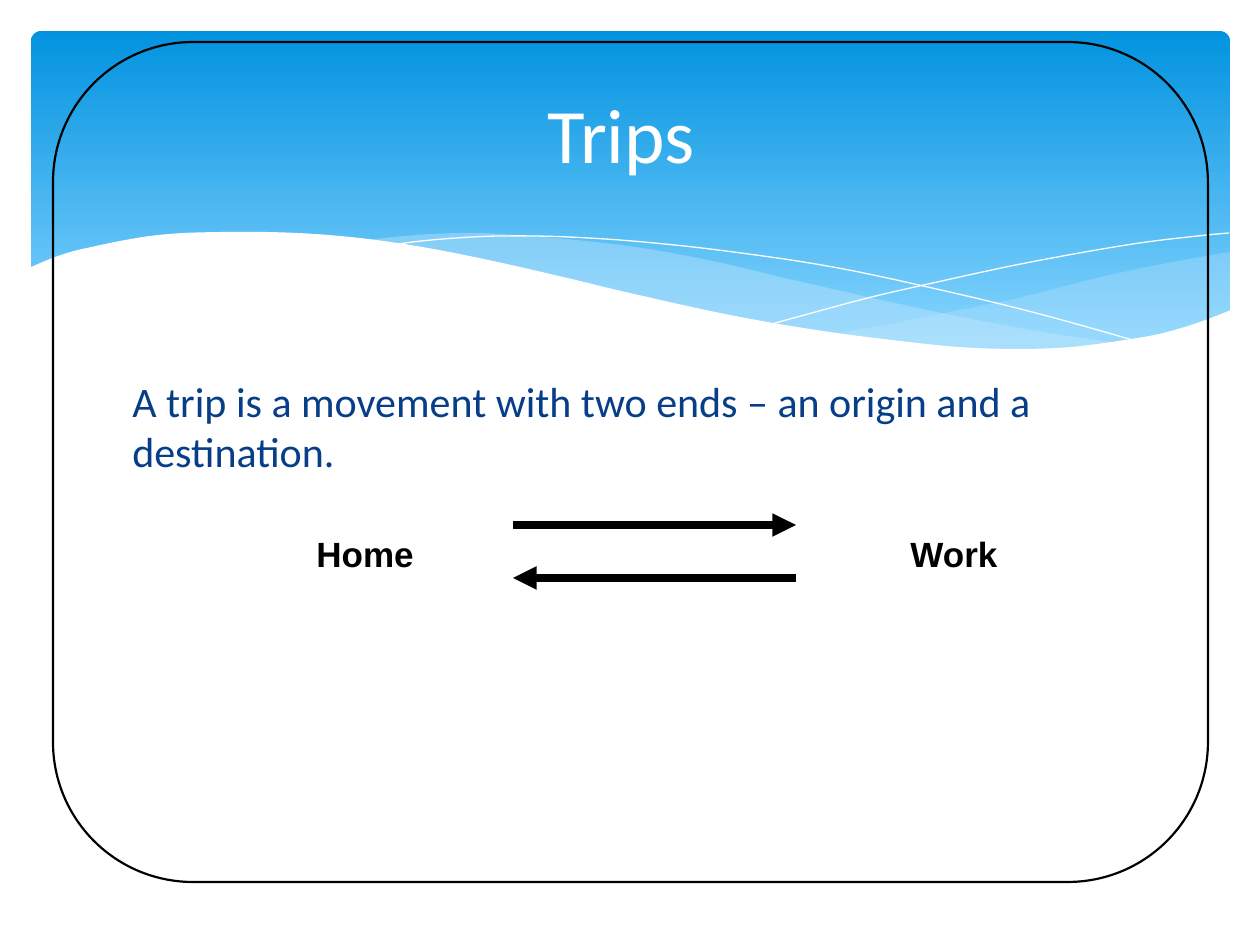
import pptx
import pptx.util
import pptx.dml.color
import pptx.enum.shapes
import pptx.enum.text
import pptx.oxml.ns
import lxml.etree

THEME = {
    "sky": "0293E0", "pale_sky": "83D3FE", "mist": "C6E7FC",
    "white": "FFFFFF", "black": "000000", "navy": "073E87",
    "title_size": 44, "body_size": 24, "label_size": 20,
    "text_font": "Calibri", "label_font": "Arial",
}
COLOR = pptx.dml.color.RGBColor.from_string
SHAPE = pptx.enum.shapes.MSO_SHAPE
ALIGN = pptx.enum.text.PP_ALIGN
ANCHOR = pptx.enum.text.MSO_ANCHOR
QN = pptx.oxml.ns.qn
PX = 914400 / 126
STEPS = 6


def px(*lengths):
    return [round(length * PX) for length in lengths]


def smooth(knots):
    ends = [knots[0], *knots, knots[-1]]
    points = [knots[0]]
    for a, b, c, d in zip(ends, ends[1:], ends[2:], ends[3:]):
        for step in range(1, STEPS + 1):
            t = step / STEPS
            points.append(tuple(
                q + t * (r - p) / 2 + t**2 * (2 * p - 5 * q + 4 * r - s) / 2
                + t**3 * (3 * q - p - 3 * r + s) / 2
                for p, q, r, s in zip(a, b, c, d)))
    return points


deck = pptx.Presentation()
deck.slide_width, deck.slide_height = px(1260, 945)
slide = deck.slides.add_slide(deck.slide_layouts[6])
shapes = slide.shapes

banner = shapes.add_shape(SHAPE.ROUNDED_RECTANGLE, *px(31, 31, 1199, 340))
banner.adjustments[0] = 0.03
banner.shadow.inherit = False
banner.line.fill.background()
banner.fill.gradient()
banner.fill.gradient_angle = 270
for stop, position, color in zip(banner.fill.gradient_stops, (0, 0.9), ("sky", "pale_sky")):
    stop.position = position
    stop.color.rgb = COLOR(THEME[color])

right_top = [(1230, 252), (1178, 261), (1123, 272), (1085, 281), (1014, 299),
             (949, 312), (890, 324), (833, 334)]
right_bottom = [(833, 334), (888, 341), (939, 346), (984, 349), (1026, 350),
                (1076, 348), (1120, 343), (1160, 334), (1196, 324), (1230, 311)]
left_top = [(1125, 344), (1055, 334), (976, 320), (890, 302), (793, 280), (717, 262),
            (648, 249), (586, 241), (529, 236), (479, 233), (433, 234), (394, 237), (360, 241)]
left_bottom = [(360, 241), (431, 251), (509, 266), (566, 280), (668, 302), (757, 321),
               (838, 335), (910, 345), (974, 349), (1031, 350), (1080, 349), (1125, 344)]
falling_thread = [(389, 246), (413, 242), (457, 238), (505, 236), (567, 237), (643, 242),
                  (733, 252), (838, 268), (958, 294), (1047, 316), (1143, 343)]
rising_thread = [(772, 324), (823, 310), (876, 296), (942, 281), (1016, 265),
                 (1091, 251), (1147, 242), (1198, 236), (1229, 233)]
shore = [(1231, 310), (1197, 323), (1159, 334), (1118, 341), (1071, 347), (1019, 349),
         (959, 347), (892, 340), (816, 330), (730, 315), (634, 294), (563, 277),
         (493, 261), (428, 248), (368, 239), (315, 234), (266, 232), (223, 232),
         (184, 233), (150, 236), (120, 241), (96, 246), (74, 251), (58, 256),
         (45, 261), (29, 268)]

for outline, color, opacity in (
    (smooth(right_top) + smooth(right_bottom), "mist", 29),
    (smooth(left_top) + smooth(left_bottom), "mist", 40),
    (smooth(falling_thread), None, 100),
    (smooth(rising_thread), None, 100),
    (smooth(shore) + [(29, 415), (1231, 415)], "white", 100),
):
    corners = [px(*point) for point in outline]
    builder = shapes.build_freeform(*corners[0])
    builder.add_line_segments(corners[1:], close=color is not None)
    wave = builder.convert_to_shape()
    wave.shadow.inherit = False
    if color:
        wave.fill.solid()
        wave.fill.fore_color.rgb = COLOR(THEME[color])
        wave.line.fill.background()
    else:
        wave.fill.background()
        wave.line.color.rgb = COLOR(THEME["white"])
        wave.line.width = 0
    if opacity < 100:
        tint = wave.fill._xPr.find(".//" + QN("a:srgbClr"))
        lxml.etree.SubElement(tint, QN("a:alpha"), val=str(opacity * 1000))

frame = shapes.add_shape(SHAPE.ROUNDED_RECTANGLE, *px(53, 42, 1155, 840))
frame.shadow.inherit = False
frame.fill.background()
frame.line.color.rgb = COLOR(THEME["black"])
frame.line.width = pptx.util.Pt(1.25)

definition = shapes.add_textbox(*px(120, 369, 1020, 475))
title = shapes.add_textbox(*px(63, 47, 1134, 172))
captions = [
    (definition, "A trip is a movement with two ends – an origin and a destination.",
     ALIGN.LEFT, ANCHOR.TOP, "body_size", "text_font", "navy", False),
    (title, "Trips ", ALIGN.CENTER, ANCHOR.MIDDLE, "title_size", "text_font", "white", False),
]

for place, left in (("Home", 239), ("Work", 828)):
    spot = shapes.add_shape(SHAPE.OVAL, *px(left, 484, 252, 147))
    label = shapes.add_shape(SHAPE.RECTANGLE, *px(left + 42, 525, 168, 56))
    spot.fill.solid()
    spot.fill.fore_color.rgb = COLOR(THEME["white"])
    label.fill.background()
    for part, width in ((spot, 3), (label, 0.75)):
        part.shadow.inherit = False
        part.line.color.rgb = COLOR(THEME["white"])
        part.line.width = pptx.util.Pt(width)
    captions.append((label, place, ALIGN.CENTER, ANCHOR.MIDDLE,
                     "label_size", "label_font", "black", True))

for holder, wording, align, anchor, size, font, color, bold in captions:
    holder.text_frame.word_wrap = True
    holder.text_frame.vertical_anchor = anchor
    paragraph = holder.text_frame.paragraphs[0]
    paragraph.alignment = align
    run = paragraph.add_run()
    run.text = wording
    run.font.color.rgb = COLOR(THEME[color])
    looks = {"size": pptx.util.Pt(THEME[size]), "name": THEME[font], "bold": bold}
    for attribute, value in looks.items():
        setattr(run.font, attribute, value)

for height, arrowhead in ((525, "a:tailEnd"), (578, "a:headEnd")):
    journey = shapes.add_connector(
        pptx.enum.shapes.MSO_CONNECTOR.STRAIGHT, *px(513, height, 796, height))
    journey.line.color.rgb = COLOR(THEME["black"])
    journey.line.width = pptx.util.Pt(4.5)
    lxml.etree.SubElement(journey.line._get_or_add_ln(), QN(arrowhead), type="triangle")
    lxml.etree.SubElement(journey._element.spPr, QN("a:effectLst"))

deck.save("out.pptx")
